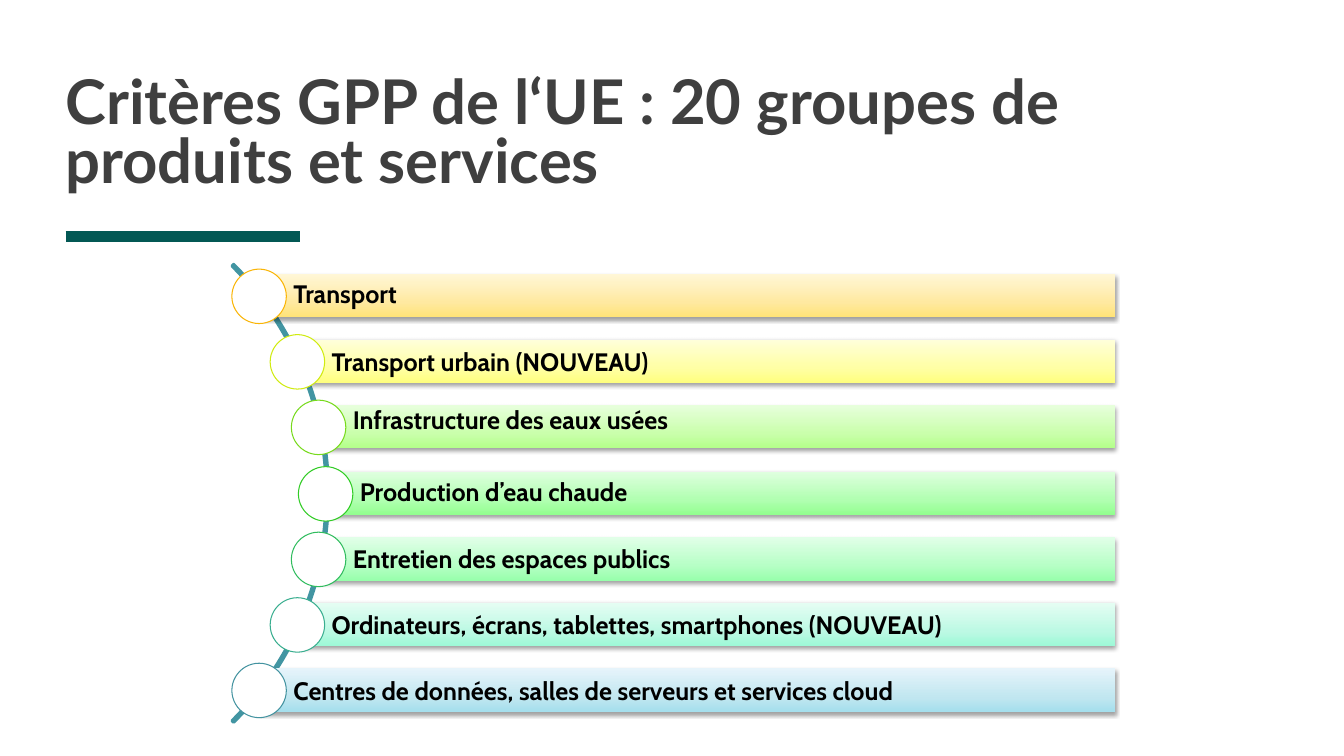
from dataclasses import dataclass
from math import sqrt

from lxml import etree
from pptx import Presentation
from pptx.dml.color import RGBColor
from pptx.enum.shapes import MSO_CONNECTOR, MSO_SHAPE
from pptx.enum.text import MSO_ANCHOR
from pptx.oxml.ns import qn
from pptx.shapes.autoshape import Shape
from pptx.slide import Slide
from pptx.util import Emu, Pt

RECTANGLE = MSO_SHAPE.RECTANGLE
OVAL = MSO_SHAPE.OVAL
BLOCK_ARC = MSO_SHAPE.BLOCK_ARC
STRAIGHT = MSO_CONNECTOR.STRAIGHT
MIDDLE = MSO_ANCHOR.MIDDLE
BOTTOM = MSO_ANCHOR.BOTTOM

WHITE = RGBColor(0xFF, 0xFF, 0xFF)
BLACK = RGBColor(0x00, 0x00, 0x00)
TITLE_GREY = RGBColor(0x3F, 0x3F, 0x3F)
RULE_GREEN = RGBColor(0x03, 0x58, 0x54)
ARC_TEAL = RGBColor(0x42, 0x95, 0xA2)

EMU_PER_PX = 9144  # 100 px to the inch
GRADIENT_STOPS = (0, 35, 100)

BAR_TOP = 272
BAR_HEIGHT = 43
BAR_RIGHT = 1106
ROW_PITCH = 65.17
BULLET_SIZE = 54
BULLET_ORBIT_X = 1
BULLET_ORBIT_RADIUS = 322


@dataclass(frozen=True)
class ProductGroup:
    label: str
    outline: RGBColor
    gradient: tuple[RGBColor, RGBColor, RGBColor]
    line_spacing: float = 1.0
    label_lift: int = 0


def product_group(label: str, outline: str, gradient: str,
                  line_spacing: float = 1.0, label_lift: int = 0) -> ProductGroup:
    dark, medium, light = map(RGBColor.from_string, gradient.split())
    return ProductGroup(label, RGBColor.from_string(outline),
                        (dark, medium, light), line_spacing, label_lift)


GROUPS = (
    product_group("Transport", "FAB506", "FFE376 FFE9A1 FFF7D7", 0.9),
    product_group("Transport urbain (NOUVEAU)", "D0EB10", "FFFF7E FFFFA5 FFFFDA"),
    product_group("Infrastructure des eaux usées", "77DA1C", "B3FF89 CAFFAC E7FFDC",
                  label_lift=7),
    product_group("Production d’eau chaude", "32CC26", "92FF8F B1FFB1 DFFFDF", 0.9),
    product_group("Entretien des espaces publics", "30BC5E", "97FFAB B7FFC6 E1FFE8"),
    product_group("Ordinateurs, écrans, tablettes, smartphones (NOUVEAU)", "39AE8F",
                  "9EF9D7 BDF9E4 E5FDF3"),
    product_group("Centres de données, salles de serveurs et services cloud", "4393A0",
                  "A6DFED C2E7F0 E6F4FB"),
)


def px(length: int) -> Emu:
    return Emu(length * EMU_PER_PX)


def add_plain_shape(page: Slide, kind: MSO_SHAPE, left: int, top: int,
                    width: int, height: int) -> Shape:
    shape = page.shapes.add_shape(kind, px(left), px(top), px(width), px(height))
    shape.shadow.inherit = False
    return shape


def add_label(page: Slide, text: str, left: int, top: int, width: int, height: int,
              font_name: str, size: int, color: RGBColor, anchor: MSO_ANCHOR,
              line_spacing: float, left_inset: int = 0, inset: int = 0) -> None:
    box = page.shapes.add_textbox(px(left), px(top), px(width), px(height))
    frame = box.text_frame
    frame.word_wrap = True
    frame.vertical_anchor = anchor
    frame.margin_left = px(left_inset)
    frame.margin_top = frame.margin_right = frame.margin_bottom = px(inset)
    para = frame.paragraphs[0]
    para.text = text
    para.line_spacing = line_spacing
    para.font.name = font_name
    para.font.size = Pt(size)
    para.font.bold = True
    para.font.color.rgb = color


def fill_gradient(shape: Shape, colors: tuple[RGBColor, ...]) -> None:
    """Fill from the bottom edge upwards with one color per gradient stop."""
    shape.fill.gradient()
    shape.fill.gradient_angle = 90
    stops = shape.element.spPr.find(qn("a:gradFill")).find(qn("a:gsLst"))
    for stop in list(stops):
        stops.remove(stop)
    for position, color in zip(GRADIENT_STOPS, colors):
        stop = etree.SubElement(stops, qn("a:gs"), pos=str(position * 1000))
        etree.SubElement(stop, qn("a:srgbClr"), val=str(color))


def drop_shadow(shape: Shape) -> None:
    effects = shape.element.spPr.find(qn("a:effectLst"))
    shadow = etree.SubElement(effects, qn("a:outerShdw"), blurRad=str(Pt(3.1)),
                              dist=str(Pt(1.6)), dir="5400000", rotWithShape="0")
    color = etree.SubElement(shadow, qn("a:srgbClr"), val=str(BLACK))
    etree.SubElement(color, qn("a:alpha"), val="37000")


def add_title(page: Slide) -> None:
    rule = page.shapes.add_connector(STRAIGHT, px(65), px(235), px(298), px(235))
    rule.line.color.rgb = RULE_GREEN
    rule.line.width = Pt(8)
    etree.SubElement(rule.element.spPr, qn("a:effectLst"))
    add_label(page, "Critères GPP de l‘UE : 20 groupes de produits et services",
              65, 22, 1200, 172, "Lato", 44, TITLE_GREY, BOTTOM, 0.8)


def add_arc(page: Slide) -> None:
    arc = add_plain_shape(page, BLOCK_ARC, -317, 168, 643, 643)
    for index, value in enumerate((189, 27, 0.004)):
        arc.adjustments[index] = value
    arc.fill.background()
    arc.line.color.rgb = ARC_TEAL
    arc.line.width = Pt(2)


def add_group(page: Slide, group: ProductGroup, index: int) -> None:
    """Draw a bar whose left end and bullet follow the arc."""
    rise = (index - (len(GROUPS) - 1) / 2) * ROW_PITCH
    left = round(BULLET_ORBIT_X + sqrt(BULLET_ORBIT_RADIUS ** 2 - rise ** 2))
    top = round(BAR_TOP + index * ROW_PITCH)
    width = BAR_RIGHT - left

    bar = add_plain_shape(page, RECTANGLE, left, top, width, BAR_HEIGHT)
    fill_gradient(bar, group.gradient)
    bar.line.fill.background()
    drop_shadow(bar)

    add_label(page, group.label, left, top - group.label_lift, width, BAR_HEIGHT,
              "Cabin", 18, BLACK, MIDDLE, group.line_spacing, left_inset=34, inset=6)

    bullet = add_plain_shape(page, OVAL, left - BULLET_SIZE // 2,
                             top + (BAR_HEIGHT - BULLET_SIZE) // 2 + 1,
                             BULLET_SIZE, BULLET_SIZE)
    bullet.fill.solid()
    bullet.fill.fore_color.rgb = WHITE
    bullet.line.color.rgb = group.outline
    bullet.line.width = Pt(0.75)


def main() -> None:
    deck = Presentation()
    deck.slide_width = px(1333)
    deck.slide_height = px(750)
    page = deck.slides.add_slide(deck.slide_layouts[6])
    add_title(page)
    add_arc(page)
    for index, group in enumerate(GROUPS):
        add_group(page, group, index)
    deck.save("out.pptx")


if __name__ == "__main__":
    main()
